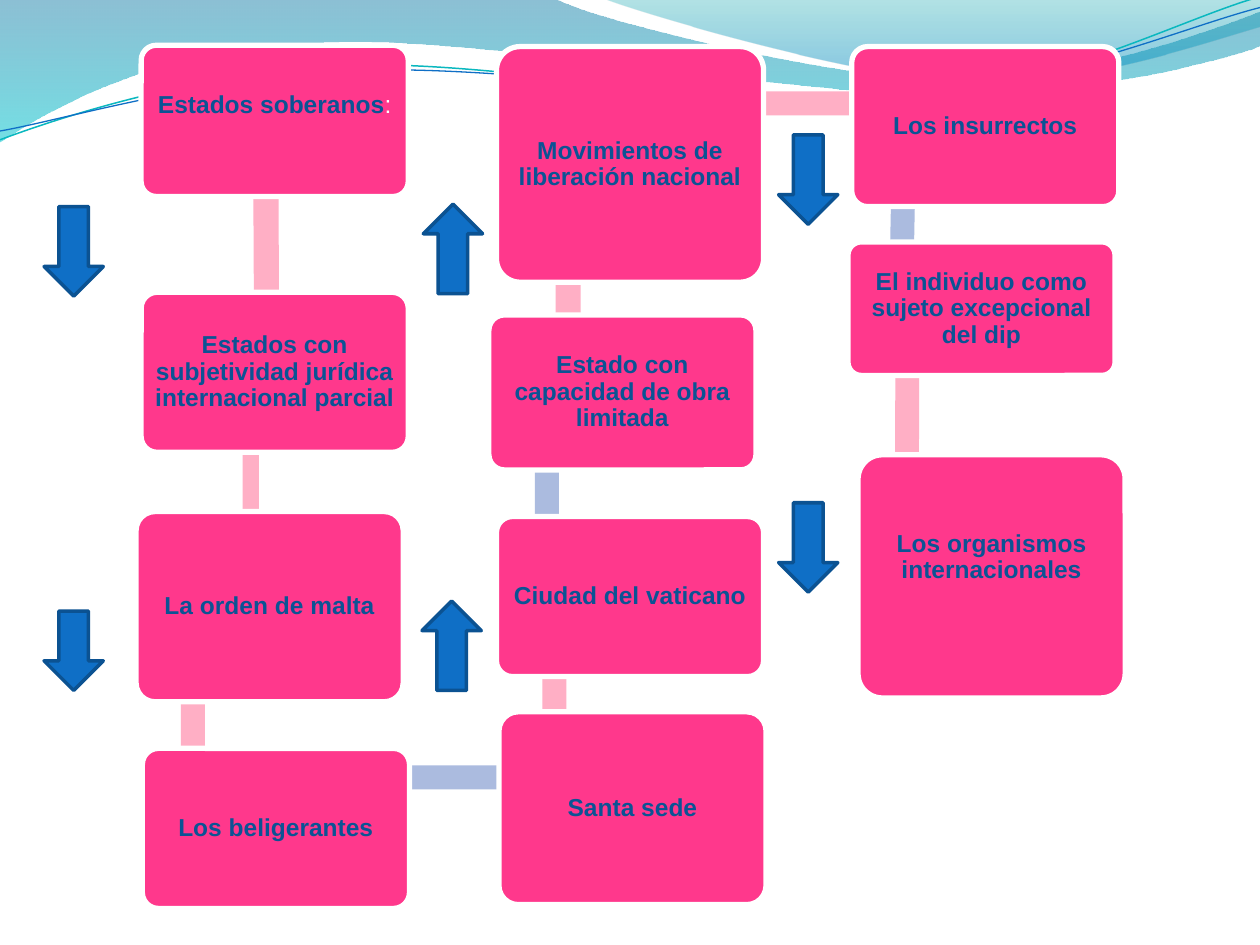
from lxml.etree import SubElement
from pptx import Presentation
from pptx.dml.color import RGBColor
from pptx.enum.shapes import MSO_SHAPE
from pptx.enum.text import MSO_ANCHOR, PP_ALIGN
from pptx.oxml.ns import qn
from pptx.util import Inches, Pt

WHITE = RGBColor(0xFF, 0xFF, 0xFF)
PINK = RGBColor(0xFF, 0x38, 0x8C)
ROSE = RGBColor(0xFF, 0xAF, 0xC5)
LILAC = RGBColor(0xAB, 0xBB, 0xDF)
INK = RGBColor(0x0B, 0x53, 0x94)
BLUE = RGBColor(0x0F, 0x6F, 0xC6)
NAVY = RGBColor(0x0B, 0x52, 0x92)
TEAL = RGBColor(0x0A, 0xB8, 0xBF)

LEFT, PITCH, WIDE = 1.12, 2.82, 2.12  # columns of boxes
PAD = 0.1                             # text margin

# text, nudge from the column, top, height, extra space under the text
COLUMNS = [
    [("Estados soberanos:", 0, 0.36, 1.2, 0.25),
     ("Estados con subjetividad jurídica internacional parcial", 0, 2.32, 1.27, 0),
     ("La orden de malta", -0.04, 4.06, 1.51, 0),
     ("Los beligerantes", 0.01, 5.94, 1.27, 0)],
    [("Movimientos de liberación nacional", 0, 0.37, 1.87, 0),
     ("Estado con capacidad de obra limitada", -0.06, 2.5, 1.23, 0),
     ("Ciudad del vaticano", 0, 4.1, 1.27, 0),
     ("Santa sede", 0.02, 5.65, 1.53, 0)],
    [("Los insurrectos", 0, 0.37, 1.27, 0),
     ("El individuo como sujeto excepcional del dip", -0.03, 1.92, 1.06, 0),
     ("Los organismos internacionales", 0.05, 3.61, 1.93, 0.3)],
]

# centre x, centre y, length, thickness, turn, colour
BARS = [
    (2.11, 1.47, 1.97, 0.2, 89.7, ROSE), (1.99, 3.69, 0.93, 0.13, 90, ROSE),
    (1.53, 5.37, 1.75, 0.19, 90, ROSE), (2.98, 6.17, 2.83, 0.19, 0, LILAC),
    (4.4, 5.37, 1.67, 0.19, 90, ROSE), (4.34, 3.6, 1.61, 0.19, 270, LILAC),
    (4.51, 1.96, 1.76, 0.2, 270, ROSE), (5.78, 0.82, 2.83, 0.19, 0, ROSE),
    (7.17, 1.41, 1.44, 0.19, 91.1, LILAC), (7.2, 3.19, 2.11, 0.19, 90.2, ROSE),
]

DOWN, UP = MSO_SHAPE.DOWN_ARROW, MSO_SHAPE.UP_ARROW
ARROWS = [(DOWN, 0.35, 1.64, 0.71), (DOWN, 0.35, 4.85, 0.63),
          (UP, 3.35, 4.77, 0.71), (DOWN, 6.18, 3.99, 0.71),
          (DOWN, 6.18, 1.07, 0.71), (UP, 3.36, 1.62, 0.71)]

# outlines: a pair is a corner, six numbers are a Bézier curve
WAVES = [
    ([(0, 0), (4.4, -0.01), (4.76, 0.17, 6.64, 0.63, 7.58, 0.63),
      (8.53, 0.63, 9.58, 0.26, 10, 0.09), (10.01, 0.36),
      (9.83, 0.44, 8.7, 0.76, 7.46, 0.75), (6.22, 0.75, 3.82, 0.28, 2.57, 0.34),
      (1.29, 0.36, 0.46, 0.83, -0.01, 1.13), (0, 0)],
     [(0, RGBColor(0x00, 0x74, 0xA1), 45), (1, RGBColor(0x00, 0xC6, 0xCF), 55)]),
    ([(4.79, -0.01), (5.09, 0.11, 6.82, 0.62, 7.69, 0.65),
      (8.56, 0.69, 9.61, 0.32, 10, 0.21), (10, 0), (4.79, -0.01)],
     [(0, RGBColor(0x00, 0xA1, 0xA9), 30), (0.8, RGBColor(0x00, 0x8B, 0xBF), 45)]),
]
STRANDS = [
    ([(0, 1.11), (0.48, 0.93, 1.58, 0.57, 2.77, 0.52),
      (3.95, 0.47, 5.93, 0.89, 7.13, 0.8), (8.33, 0.71, 9.38, 0.15, 9.98, -0.02)],
     TEAL, 0.85),
    ([(0, 1.04), (0.47, 0.96, 1.64, 0.61, 2.83, 0.56),
      (4.03, 0.51, 5.97, 0.84, 7.17, 0.75), (8.36, 0.67, 9.41, 0.21, 10, 0.06)],
     BLUE, 0.75),
]


def outline(shapes, steps, close):
    """Draw a freeform through the step ends, then bend its curved steps."""
    ends = [(Inches(step[-2]), Inches(step[-1])) for step in steps]
    pen = shapes.build_freeform(*ends[0])
    pen.add_line_segments(ends[1:], close=close)
    shape = pen.convert_to_shape()
    shape.shadow.inherit = False
    lines = list(shape.element.iter(qn("a:lnTo")))
    for line, step in zip(lines, steps[1:]):
        if len(step) == 6:
            line.tag = qn("a:cubicBezTo")
            line.clear()
            for x, y in zip(step[::2], step[1::2]):
                point = SubElement(line, qn("a:pt"))
                point.set("x", str(Inches(x) - shape.left))
                point.set("y", str(Inches(y) - shape.top))
    return shape


def add_wave(shapes, steps, stops):
    shape = outline(shapes, steps, True)
    shape.line.fill.background()
    shape.fill.gradient()
    shape.fill.gradient_angle = 270
    for stop, (place, colour, alpha) in zip(shape.fill.gradient_stops, stops):
        stop.position = place
        stop.color.rgb = colour
    for tint, (place, colour, alpha) in zip(shape.element.iter(qn("a:srgbClr")), stops):
        SubElement(tint, qn("a:alpha")).set("val", str(alpha * 1000))


def add_strand(shapes, steps, colour, weight):
    shape = outline(shapes, steps, False)
    shape.fill.background()
    shape.line.color.rgb = colour
    shape.line.width = Pt(weight)


def add_solid(shapes, kind, x, y, w, h, fill, edge=None, weight=0):
    shape = shapes.add_shape(kind, Inches(x), Inches(y), Inches(w), Inches(h))
    shape.shadow.inherit = False
    shape.fill.solid()
    shape.fill.fore_color.rgb = fill
    if edge is None:
        shape.line.fill.background()
    else:
        shape.line.color.rgb = edge
        shape.line.width = Pt(weight)
    return shape


def add_box(shapes, text, x, y, h, lift):
    box = add_solid(shapes, MSO_SHAPE.ROUNDED_RECTANGLE, x, y, WIDE, h, PINK, WHITE, 3)
    box.adjustments[0] = 0.1
    frame = box.text_frame
    frame.word_wrap = True
    frame.vertical_anchor = MSO_ANCHOR.MIDDLE
    frame.margin_left = frame.margin_right = Inches(0.06)
    frame.margin_top = Inches(PAD)
    frame.margin_bottom = Inches(PAD + lift)
    line = frame.paragraphs[0]
    line.alignment = PP_ALIGN.CENTER
    line.line_spacing = 0.9
    words, colon, rest = text.partition(":")
    for part, colour, bold in ((words, INK, True), (colon, WHITE, False)):
        if part:
            run = line.add_run()
            run.text = part
            run.font.name, run.font.size = "Arial", Pt(14)
            run.font.bold = bold
            run.font.color.rgb = colour


def main():
    deck = Presentation()
    deck.slide_width, deck.slide_height = Inches(10), Inches(7.5)
    shapes = deck.slides.add_slide(deck.slide_layouts[6]).shapes
    for wave in WAVES:
        add_wave(shapes, *wave)
    for strand in STRANDS:
        add_strand(shapes, *strand)
    for x, y, span, thick, turn, colour in BARS:
        bar = add_solid(shapes, MSO_SHAPE.RECTANGLE, x - span / 2, y - thick / 2,
                        span, thick, colour)
        bar.rotation = turn
    for col, boxes in enumerate(COLUMNS):
        for text, nudge, top, high, lift in boxes:
            add_box(shapes, text, LEFT + col * PITCH + nudge, top, high, lift)
    for kind, x, y, high in ARROWS:
        add_solid(shapes, kind, x, y, 0.47, high, BLUE, NAVY, 2)
    deck.save("out.pptx")


if __name__ == "__main__":
    main()
